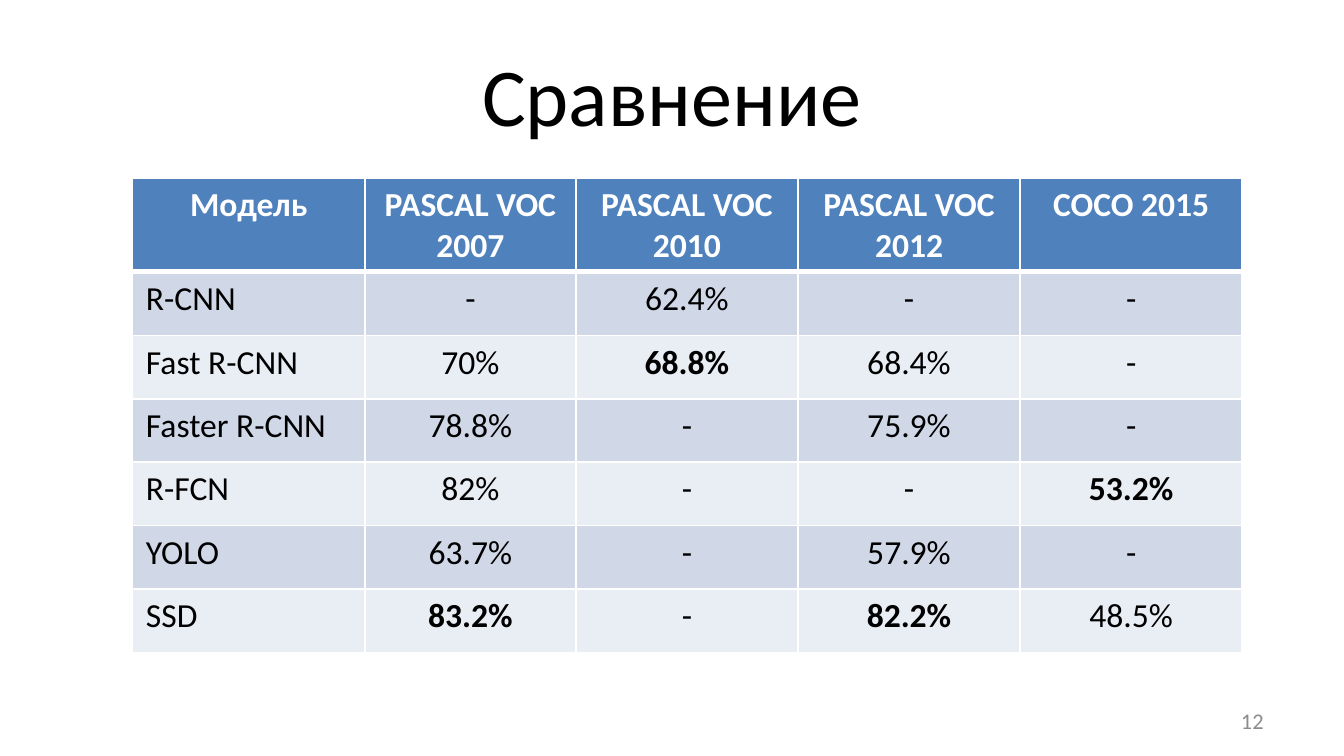
from dataclasses import dataclass

from lxml import etree
from pptx import Presentation
from pptx.dml.color import RGBColor
from pptx.enum.text import MSO_ANCHOR, PP_ALIGN
from pptx.oxml.ns import qn
from pptx.util import Pt

LEFT, MID, RIGHT = PP_ALIGN.LEFT, PP_ALIGN.CENTER, PP_ALIGN.RIGHT
CENTRED = MSO_ANCHOR.MIDDLE


@dataclass(frozen=True)
class Theme:
    font: str = "Calibri"
    ink: str = "000000"
    white: str = "FFFFFF"
    grey: str = "8C8C8C"
    head: str = "4F81BD"
    bands: tuple = ("D0D8E8", "E9EDF4")
    title: int = 44
    body: int = 18
    note: int = 12
    thin: int = 1
    thick: int = 3


THEME = Theme()
WIDTHS = [124.5, 113, 119, 119, 119]
ROW = 34
HEADS = ["Модель", "PASCAL VOC 2007", "PASCAL VOC 2010", "PASCAL VOC 2012", "COCO 2015"]
MODELS = [
    ["R-CNN", None, 62.4, None, None],
    ["Fast R-CNN", 70, 68.8, 68.4, None],
    ["Faster R-CNN", 78.8, None, 75.9, None],
    ["R-FCN", 82, None, None, 53.2],
    ["YOLO", 63.7, None, 57.9, None],
    ["SSD", 83.2, None, 82.2, 48.5],
]


def write(frame, text, size=THEME.body, color=THEME.ink, bold=False, align=MID):
    para = frame.paragraphs[0]
    para.alignment = align
    run = para.add_run()
    run.text = text
    font = run.font
    font.name, font.size, font.bold = THEME.font, Pt(size), bold
    font.color.rgb = RGBColor.from_string(color)


def place(shape, x, y, w, h):
    shape.left, shape.top, shape.width, shape.height = Pt(x), Pt(y), Pt(w), Pt(h)


def border(cell, **sides):
    """Draw white cell edges; sides maps L, R, T and B, in that order, to widths."""
    props = cell._tc.get_or_add_tcPr()
    for side, width in sides.items():
        line = etree.SubElement(props, qn(f"a:ln{side}"), w=str(Pt(width)))
        fill = etree.SubElement(line, qn("a:solidFill"))
        etree.SubElement(fill, qn("a:srgbClr"), val=THEME.white)


def paint(cell, color, top=THEME.thin, base=THEME.thin):
    border(cell, L=THEME.thin, R=THEME.thin, T=top, B=base)
    cell.fill.solid()
    cell.fill.fore_color.rgb = RGBColor.from_string(color)


def add_title(slide, text):
    title = slide.shapes.title
    place(title, 36, 16.5, 648, 67.5)
    title.text_frame.vertical_anchor = CENTRED
    write(title.text_frame, text, size=THEME.title)


def add_scores(slide):
    """Add the table of models, with the best score of each column in bold."""
    count = len(MODELS) + 1
    table = slide.shapes.add_table(
        count, len(HEADS), Pt(71), Pt(95.25), Pt(sum(WIDTHS)), Pt(count * ROW)
    ).table
    for col, width in zip(table.columns, WIDTHS):
        col.width = Pt(width)
    for c, text in enumerate(HEADS):
        cell = table.cell(0, c)
        paint(cell, THEME.head, base=THEME.thick)
        write(cell.text_frame, text, color=THEME.white, bold=True)

    best = [max(filter(None, col)) for col in list(zip(*MODELS))[1:]]
    for r, (name, *scores) in enumerate(MODELS, 1):
        top = THEME.thick if r == 1 else THEME.thin
        for c in range(len(HEADS)):
            paint(table.cell(r, c), THEME.bands[(r - 1) % 2], top=top)
        write(table.cell(r, 0).text_frame, name, align=LEFT)
        for c, (score, peak) in enumerate(zip(scores, best), 1):
            text = "-" if score is None else f"{score}%"
            write(table.cell(r, c).text_frame, text, bold=score == peak)


def add_number(slide, text):
    box = slide.shapes.add_textbox(Pt(516), Pt(375.25), Pt(168), Pt(21.5))
    box.text_frame.word_wrap = True
    box.text_frame.vertical_anchor = CENTRED
    write(box.text_frame, text, size=THEME.note, color=THEME.grey, align=RIGHT)


def main():
    deck = Presentation()
    deck.slide_width, deck.slide_height = Pt(720), Pt(405)
    slide = deck.slides.add_slide(deck.slide_layouts.get_by_name("Title Only"))
    add_number(slide, "12")
    add_title(slide, "Сравнение")
    add_scores(slide)
    deck.save("out.pptx")


if __name__ == "__main__":
    main()
